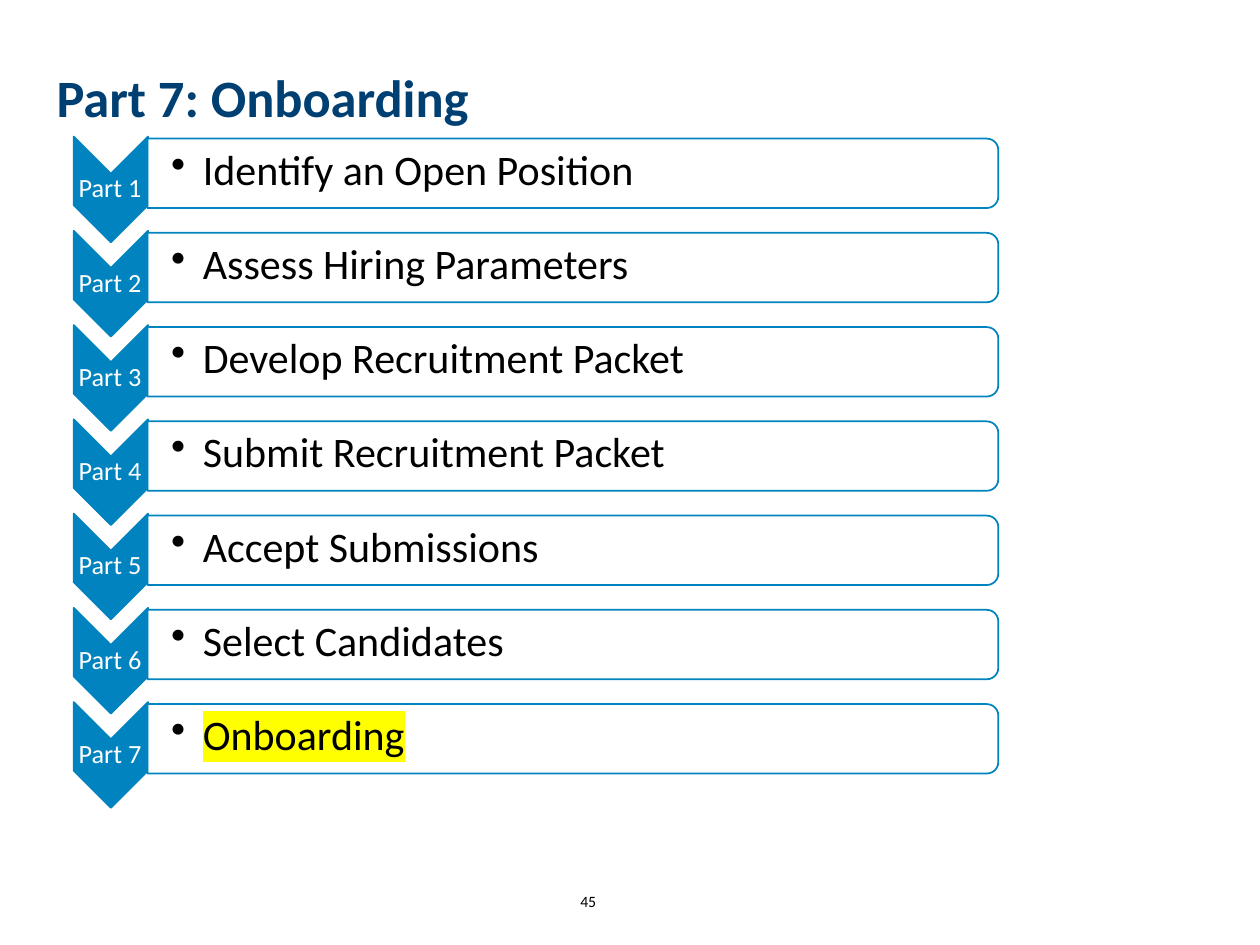
from lxml import etree
from pptx import Presentation
from pptx import util as u
from pptx.dml.color import RGBColor
from pptx.enum import shapes, text
from pptx.oxml.ns import qn

COLORS = {"title": "003F72", "blue": "0083BE", "white": "FFFFFF",
          "black": "000000", "highlight": "FFFF00"}
PARTS = ["Identify an Open Position", "Assess Hiring Parameters",
         "Develop Recruitment Packet", "Submit Recruitment Packet",
         "Accept Submissions", "Select Candidates", "Onboarding"]
PITCH = 1.9


def write(shape, words, size, color, bold=False, align=text.PP_ALIGN.LEFT,
          margins=(0.25, 0.13, 0.25, 0.13), spacing=0.9, bullet=False, highlight=None):
    frame = shape.text_frame
    frame.word_wrap = True
    frame.vertical_anchor = text.MSO_ANCHOR.MIDDLE
    frame.margin_left, frame.margin_top, frame.margin_right, frame.margin_bottom = map(u.Cm, margins)
    paragraph = frame.paragraphs[0]
    paragraph.alignment = align
    paragraph.line_spacing = spacing
    if bullet:
        paragraph.level = 1
        properties = paragraph._p.get_or_add_pPr()
        properties.set("marL", str(u.Cm(0.64)))
        properties.set("indent", str(u.Cm(-0.64)))
        etree.SubElement(properties, qn("a:buChar"), char="•")
    run = paragraph.add_run()
    run.text = words
    run.font.name = "Calibri"
    run.font.size = u.Pt(size)
    run.font.bold = bold
    run.font.color.rgb = RGBColor.from_string(COLORS[color])
    if highlight:
        marker = etree.Element(qn("a:highlight"))
        etree.SubElement(marker, qn("a:srgbClr"), val=COLORS[highlight])
        run._r.rPr.find(qn("a:solidFill")).addnext(marker)


def add_rotated(kind, left, top, width, height, fill):
    shape = slide.shapes.add_shape(kind, u.Cm(left), u.Cm(top), u.Cm(width), u.Cm(height))
    shape.rotation = 90
    shape.shadow.inherit = False
    shape.fill.solid()
    shape.fill.fore_color.rgb = RGBColor.from_string(COLORS[fill])
    shape.line.color.rgb = RGBColor.from_string(COLORS["blue"])
    shape.line.width = u.Pt(1)
    return shape


presentation = Presentation()
presentation.slide_width = u.Cm(25.4)
presentation.slide_height = u.Cm(19.05)
slide = presentation.slides.add_slide(presentation.slide_layouts[5])

title = slide.shapes.title
title.left, title.top, title.width, title.height = map(u.Cm, (0.89, 0.94, 20.24, 2.16))
write(title, "Part 7: Onboarding", 30, "title", bold=True)

page_number = slide.shapes.add_textbox(u.Cm(11.15), u.Cm(17.65), u.Cm(1.42), u.Cm(1.02))
write(page_number, "45", 9, "black", align=text.PP_ALIGN.CENTER, spacing=1.0)

for index, part in enumerate(PARTS):
    offset = index * PITCH
    add_rotated(shapes.MSO_SHAPE.CHEVRON, 1.17, 3.07 + offset, 2.13, 1.5, "blue")
    label = slide.shapes.add_textbox(u.Cm(1.47), u.Cm(3.5 + offset), u.Cm(1.5), u.Cm(0.64))
    write(label, f"Part {index + 1}", 15, "white", align=text.PP_ALIGN.CENTER,
          margins=(0.03, 0.03, 0.03, 0.03))

    panel = add_rotated(shapes.MSO_SHAPE.ROUND_2_SAME_RECTANGLE,
                        10.85, -5.08 + offset, 1.4, 17.15, "white")
    panel_color = panel._element.spPr.find(qn("a:solidFill"))[0]
    etree.SubElement(panel_color, qn("a:alpha"), val="90000")
    step = slide.shapes.add_textbox(u.Cm(2.97), u.Cm(2.84 + offset), u.Cm(17.07), u.Cm(1.24))
    write(step, part, 24, "black", margins=(0.48, 0.05, 0.05, 0.05), bullet=True,
          highlight="highlight" if part == "Onboarding" else None)

presentation.save("out.pptx")
